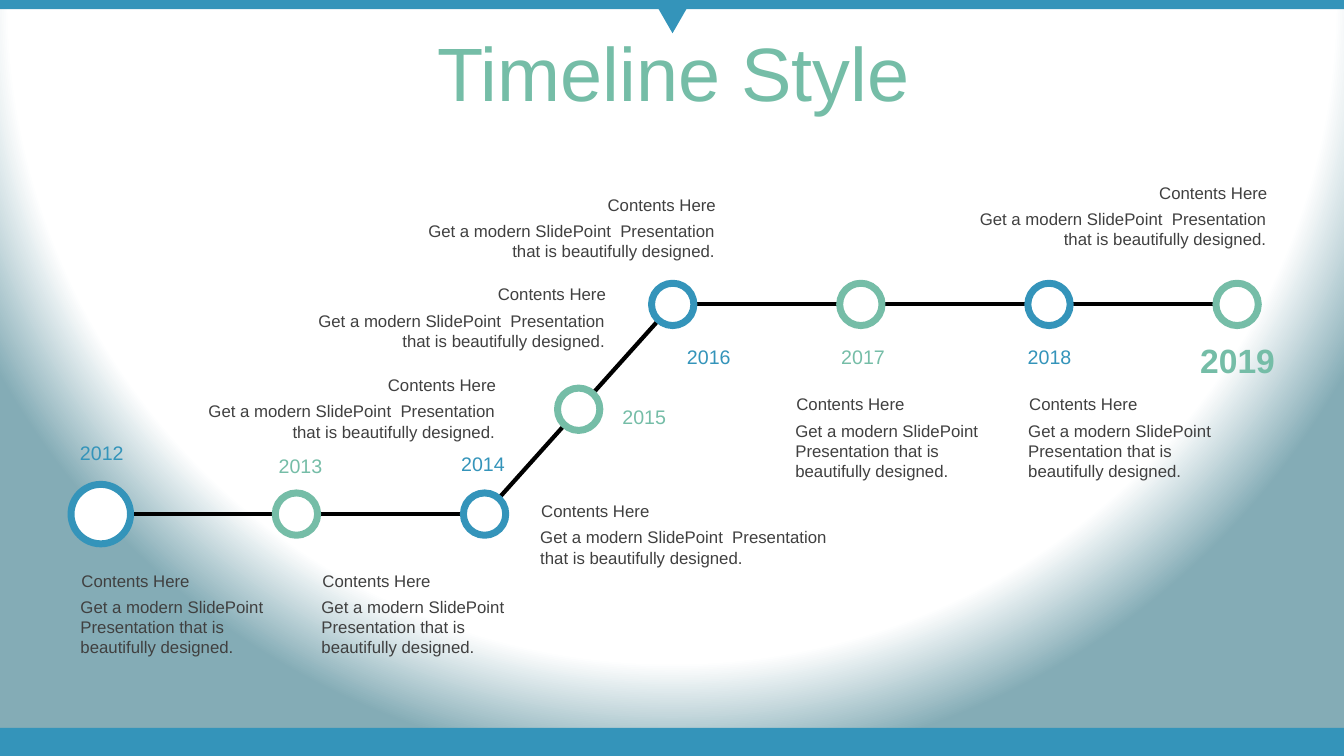
from itertools import pairwise

from lxml import etree
from pptx import Presentation
from pptx.dml.color import RGBColor
from pptx.enum import shapes, text
from pptx.oxml import ns, parse_xml
from pptx.util import Inches, Pt

COLORS = {"blue": "3494BA", "green": "75BDA7", "gray": "404040",
          "white": "FFFFFF", "black": "000000", "haze": "84ACB6"}
LEFT, CENTER, RIGHT = text.PP_ALIGN.LEFT, text.PP_ALIGN.CENTER, text.PP_ALIGN.RIGHT
LOWER, MIDDLE, UPPER = 5.1, 4.06, 3.02
FIRST_STOP, PITCH = 2.94, 1.866
HEADING = "Contents Here"
BODY = "Get a modern SlidePoint  Presentation that is beautifully designed."

# year, column, centre height, diameter, colour, label left, label top
STOPS = [
    ("2012", -1.04, LOWER, 0.59, "blue", 0.65, 4.33),
    ("2013", 0, LOWER, 0.42, "green", 2.62, 4.45),
    ("2014", 1, LOWER, 0.42, "blue", 4.43, 4.43),
    ("2015", 1.5, MIDDLE, 0.42, "green", 6.03, 3.97),
    ("2016", 2, UPPER, 0.42, "blue", 6.67, 3.37),
    ("2017", 3, UPPER, 0.42, "green", 8.2, 3.37),
    ("2018", 4, UPPER, 0.42, "blue", 10.05, 3.37),
    ("2019", 5, UPPER, 0.42, "green", 11.76, 3.32),
]
NARROW, WIDE = 2.16, 3.34
NOTES = [
    (0.7, 5.87, NARROW, LEFT),
    (3.09, 5.87, NARROW, LEFT),
    (5.26, 5.18, WIDE, LEFT),
    (1.67, 3.93, WIDE, RIGHT),
    (2.76, 3.03, WIDE, RIGHT),
    (3.85, 2.14, WIDE, RIGHT),
    (7.79, 4.12, NARROW, LEFT),
    (10.1, 4.12, NARROW, LEFT),
    (9.32, 2.02, WIDE, RIGHT),
]


def rgb(color):
    """Return the named colour."""
    return RGBColor.from_string(COLORS[color])


def stop_x(column):
    """Return the horizontal centre of a timeline column."""
    return FIRST_STOP + PITCH * column


def set_background(slide):
    """Fill the background with a round gradient, white to haze."""
    slide.background.fill.gradient()
    gradient = slide.element.find(".//" + ns.qn("a:gradFill"))
    stops = "".join(
        f'<a:gs pos="{pos}000"><a:srgbClr val="{COLORS[color]}"/></a:gs>'
        for pos, color in ((0, "white"), (86, "white"), (100, "haze")))
    gradient.getparent().replace(gradient, parse_xml(
        f'<a:gradFill {ns.nsdecls("a")} rotWithShape="1"><a:gsLst>{stops}</a:gsLst>'
        '<a:path path="circle"><a:fillToRect l="50000" t="-80000" r="50000" b="180000"/>'
        '</a:path></a:gradFill>'))


def add_figure(slide, kind, left, top, width, height, fill, outline=None):
    """Add a filled preset shape, with a thick outline if one is named."""
    figure = slide.shapes.add_shape(
        kind, Inches(left), Inches(top), Inches(width), Inches(height))
    figure.shadow.inherit = False
    figure.fill.solid()
    figure.fill.fore_color.rgb = rgb(fill)
    if outline:
        figure.line.color.rgb = rgb(outline)
        figure.line.width = Pt(5)
    else:
        figure.line.fill.background()
    return figure


def add_track(slide, start, end):
    """Add a black line between two points of the timeline."""
    track = slide.shapes.add_connector(
        shapes.MSO_CONNECTOR.STRAIGHT, *map(Inches, start + end))
    track.line.color.rgb = rgb("black")
    track.line.width = Pt(3)
    etree.SubElement(track.element.spPr, ns.qn("a:effectLst"))


def add_label(slide, words, left, top, width, height, size, color, align, bold=False):
    """Add a one-paragraph text box."""
    label = slide.shapes.add_textbox(
        Inches(left), Inches(top), Inches(width), Inches(height))
    frame = label.text_frame
    frame.word_wrap = True
    frame.text = words
    paragraph = frame.paragraphs[0]
    paragraph.alignment = align
    font = paragraph.runs[0].font
    font.name, font.size, font.bold = "Arial", Pt(size), bold
    font.color.rgb = rgb(color)
    return frame


def add_note(slide, left, top, width, align):
    """Add a heading with its description below."""
    add_label(slide, HEADING, left + 0.01, top - 0.26, width, 0.3, 12, "gray", align)
    height = 0.71 if width == NARROW else 0.5
    add_label(slide, BODY, left, top, width, height, 12, "gray", align)


def add_stop(slide, year, column, y, diameter, color, label_left, label_top):
    """Add a ring on the timeline and its year."""
    radius = diameter / 2
    add_figure(slide, shapes.MSO_SHAPE.OVAL, stop_x(column) - radius, y - radius,
               diameter, diameter, "white", color)
    latest = year == STOPS[-1][0]
    width, height, size = (1.03, 0.5, 24) if latest else (0.72, 0.34, 14)
    add_label(slide, year, label_left, label_top, width, height, size, color,
              CENTER, latest)


def main():
    """Build the timeline slide."""
    deck = Presentation()
    deck.slide_width, deck.slide_height = Inches(13.33), Inches(7.5)
    slide = deck.slides.add_slide(deck.slide_layouts[6])
    set_background(slide)
    add_figure(slide, shapes.MSO_SHAPE.RECTANGLE, 0, 7.22, 13.33, 0.28, "blue")
    add_figure(slide, shapes.MSO_SHAPE.RECTANGLE, 0, 0, 13.33, 0.09, "blue")
    pointer = add_figure(slide, shapes.MSO_SHAPE.ISOSCELES_TRIANGLE,
                         6.48, 0, 0.38, 0.33, "blue")
    pointer.rotation = 180

    title = add_label(slide, "Timeline Style", 0.35, 0.37, 12.66, 0.79, 54,
                      "green", CENTER)
    title.vertical_anchor = text.MSO_ANCHOR.MIDDLE
    title.paragraphs[0].line_spacing = 0.9

    bends = [(stop_x(STOPS[i][1]), STOPS[i][2]) for i in (0, 2, 4, 7)]
    for start, end in pairwise(bends):
        add_track(slide, start, end)
    for stop in STOPS:
        add_stop(slide, *stop)
    for note in NOTES:
        add_note(slide, *note)
    deck.save("out.pptx")


if __name__ == "__main__":
    main()
